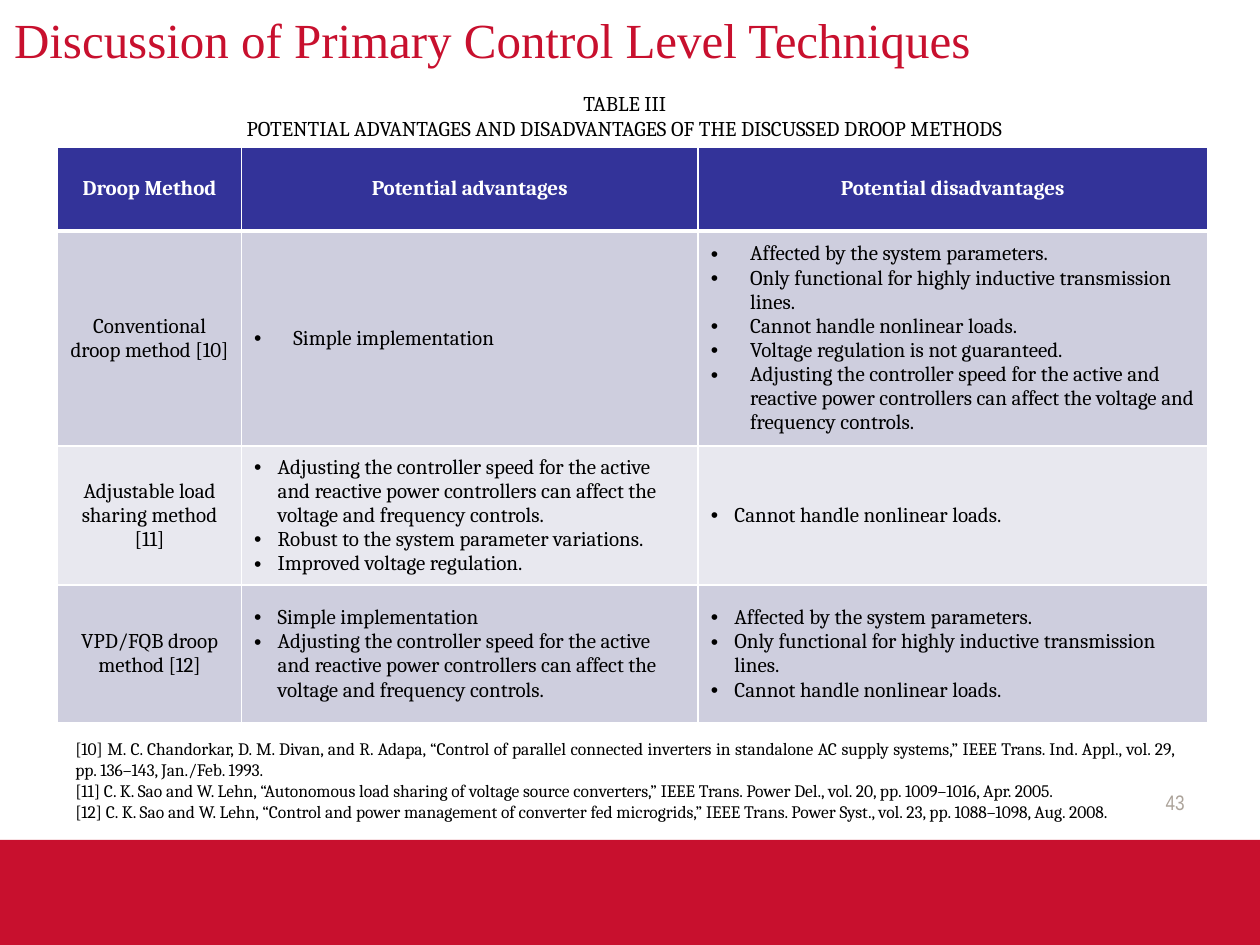
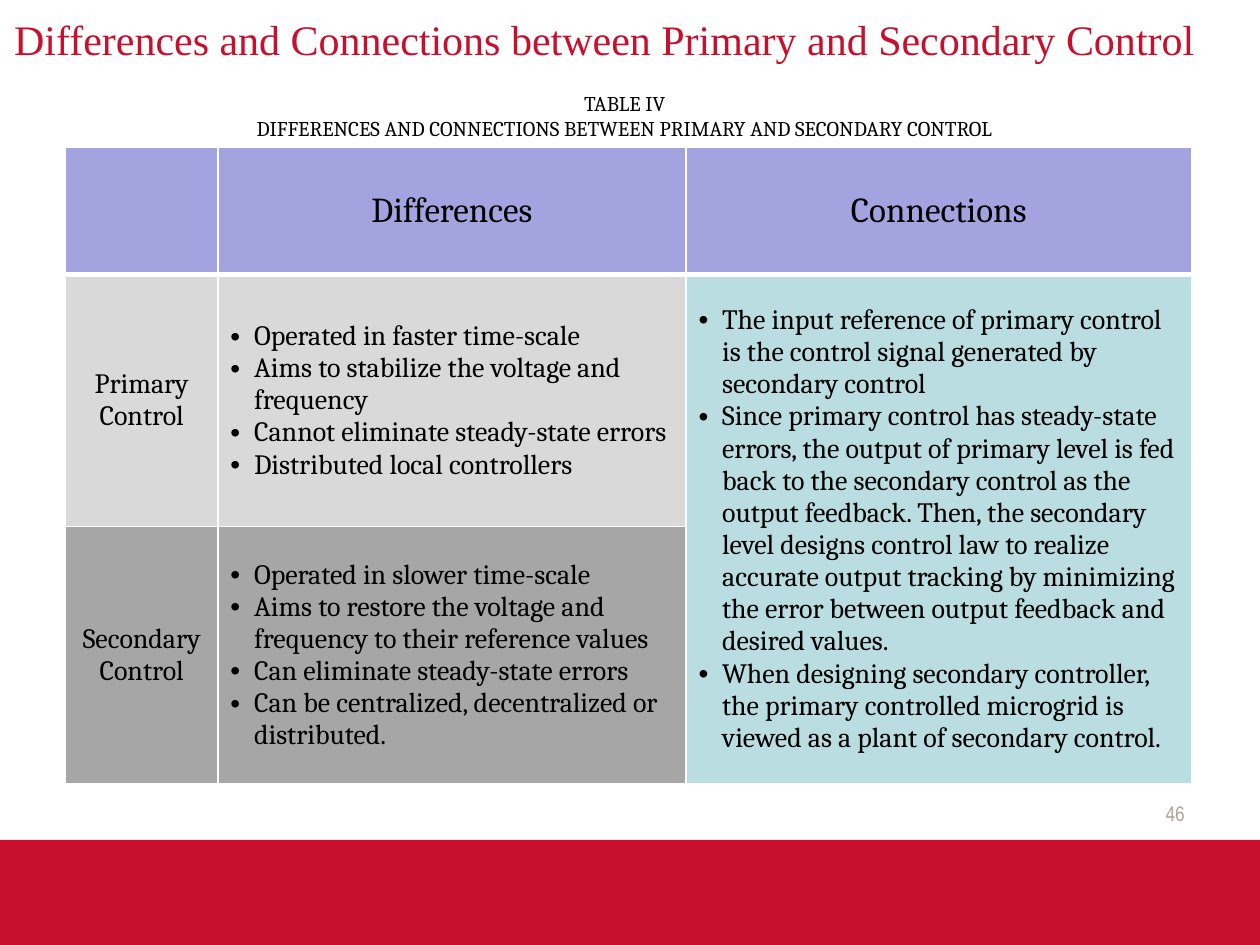
import lxml.etree
import pptx
import pptx.dml.color
import pptx.enum.shapes
import pptx.enum.text
import pptx.oxml.ns
import pptx.util

Pt = pptx.util.Pt
RGBColor = pptx.dml.color.RGBColor
ALIGN = pptx.enum.text.PP_ALIGN
ANCHOR = pptx.enum.text.MSO_ANCHOR
qn = pptx.oxml.ns.qn

# Shared colours and fonts
RED = RGBColor(0xC8, 0x10, 0x2E)
WHITE = RGBColor(0xFF, 0xFF, 0xFF)
BLACK = RGBColor(0, 0, 0)
NUMBER_GREY = RGBColor(0xAC, 0xA3, 0x9A)
NAVY = RGBColor(0x33, 0x33, 0x99)
LAVENDER = RGBColor(0xCE, 0xCE, 0xDE)
PALE = RGBColor(0xE8, 0xE8, 0xEF)
VIOLET = RGBColor(0xA3, 0xA3, 0xE0)
LIGHT_GREY = RGBColor(0xD9, 0xD9, 0xD9)
MID_GREY = RGBColor(0xA6, 0xA6, 0xA6)
TEAL = RGBColor(0xBA, 0xDD, 0xE1)
TITLE_FONT, BODY_FONT, NUMBER_FONT = "Times New Roman", "Cambria", "Arial Narrow"

# Statements that return in several cells
SIMPLE = "Simple implementation"
SPEED = ("Adjusting the controller speed for the active and reactive power "
         "controllers can affect the voltage and frequency controls.")
AFFECTED = "Affected by the system parameters."
INDUCTIVE = "Only functional for highly inductive transmission lines."
NONLINEAR = "Cannot handle nonlinear loads."

# Content: a list in a table cell becomes bullets, None continues the cell above
PAGES = [
    dict(
        title="Discussion of Primary Control Level Techniques",
        title_size=28, title_width=612, number="43", number_top=444,
        caption=["TABLE III", "POTENTIAL ADVANTAGES AND DISADVANTAGES OF THE DISCUSSED DROOP METHODS"],
        left=33, columns=[105, 261, 291], heights=[48, 123, 79, 79],
        head=dict(size=12, color=WHITE, bold=True), body_size=12,
        fills=[[NAVY] * 3, [LAVENDER] * 3, [PALE] * 3, [LAVENDER] * 3],
        indents=[0, 22.5, 13.5, 13.5],
        rows=[
            ["Droop Method", "Potential advantages", "Potential disadvantages"],
            ["Conventional droop method [10]", [SIMPLE],
             [AFFECTED, INDUCTIVE, NONLINEAR, "Voltage regulation is not guaranteed.", SPEED]],
            ["Adjustable load sharing method [11]",
             [SPEED, "Robust to the system parameter variations.", "Improved voltage regulation."],
             [NONLINEAR]],
            ["VPD/FQB droop method [12]", [SIMPLE, SPEED], [AFFECTED, INDUCTIVE, NONLINEAR]],
        ],
        references=[
            "[10] M. C. Chandorkar, D. M. Divan, and R. Adapa, “Control of parallel connected inverters "
            "in standalone AC supply systems,” IEEE Trans. Ind. Appl., vol. 29, pp. 136–143, Jan./Feb. 1993.",
            "[11] C. K. Sao and W. Lehn, “Autonomous load sharing of voltage source converters,” "
            "IEEE Trans. Power Del., vol. 20, pp. 1009–1016, Apr. 2005.",
            "[12] C. K. Sao and W. Lehn, “Control and power management of converter fed microgrids,” "
            "IEEE Trans. Power Syst., vol. 23, pp. 1088–1098, Aug. 2008.",
        ],
    ),
    dict(
        title="Differences and Connections between Primary and Secondary Control",
        title_size=24, title_width=719, number="46", number_top=450,
        caption=["TABLE IV", "DIFFERENCES AND CONNECTIONS BETWEEN PRIMARY AND SECONDARY CONTROL"],
        left=37.5, columns=[87, 267.5, 289], heights=[73, 144, 147],
        head=dict(size=20), body_size=16,
        fills=[[VIOLET] * 3, [LIGHT_GREY, LIGHT_GREY, TEAL], [MID_GREY, MID_GREY, TEAL]],
        indents=[0, 13.5, 13.5],
        rows=[
            ["", "Differences", "Connections"],
            ["Primary Control",
             ["Operated in faster time-scale",
              "Aims to stabilize the voltage and frequency",
              "Cannot eliminate steady-state errors",
              "Distributed local controllers"],
             ["The input reference of primary control is the control signal generated by secondary control",
              "Since primary control has steady-state errors, the output of primary level is fed back to "
              "the secondary control as the output feedback. Then, the secondary level designs control law "
              "to realize accurate output tracking by minimizing the error between output feedback and "
              "desired values.",
              "When designing secondary controller, the primary controlled microgrid is viewed as a plant "
              "of secondary control."]],
            ["Secondary Control",
             ["Operated in slower time-scale",
              "Aims to restore the voltage and frequency to their reference values",
              "Can eliminate steady-state errors",
              "Can be centralized, decentralized or distributed."],
             None],
        ],
        references=[],
    ),
]


def write(frame, text, size=12, font=BODY_FONT, color=BLACK, bold=False,
          align=ALIGN.LEFT, anchor=ANCHOR.TOP, indent=0):
    """Fill a text frame with one line or a list of lines; an indent adds bullets."""
    frame.word_wrap = True
    frame.vertical_anchor = anchor
    lines = [text] if isinstance(text, str) else text
    for index, line in enumerate(lines):
        para = frame.add_paragraph() if index else frame.paragraphs[0]
        para.alignment = align
        if indent:
            properties = para._p.get_or_add_pPr()
            properties.set("marL", str(Pt(indent)))
            properties.set("indent", str(-Pt(indent)))
            lxml.etree.SubElement(properties, qn("a:buFont"), typeface="Arial")
            lxml.etree.SubElement(properties, qn("a:buChar"), char="•")
        para.font.size = Pt(size)
        span = para.add_run()
        span.text = line
        span.font.size, span.font.name, span.font.bold = Pt(size), font, bold
        span.font.color.rgb = color


def set_border(cell, side, width):
    """Draw one white edge of a table cell."""
    line = lxml.etree.SubElement(cell._tc.get_or_add_tcPr(), qn("a:ln" + side), w=str(Pt(width)))
    fill = lxml.etree.SubElement(line, qn("a:solidFill"))
    lxml.etree.SubElement(fill, qn("a:srgbClr"), val=str(WHITE))


deck = pptx.Presentation()
deck.slide_width, deck.slide_height = Pt(720), Pt(540)

for content in PAGES:
    page = deck.slides.add_slide(deck.slide_layouts[6])

    # Bottom band
    band = page.shapes.add_shape(pptx.enum.shapes.MSO_SHAPE.RECTANGLE, Pt(0), Pt(480), Pt(720), Pt(60))
    band.shadow.inherit = False
    band.fill.solid()
    band.fill.fore_color.rgb = RED
    band.line.fill.background()

    # Title, page number and table caption
    box = page.shapes.add_textbox(Pt(1), Pt(1), Pt(content["title_width"]), Pt(42))
    write(box.text_frame, content["title"], size=content["title_size"], font=TITLE_FONT,
          color=RED, anchor=ANCHOR.MIDDLE)
    box = page.shapes.add_textbox(Pt(516), Pt(content["number_top"]), Pt(168), Pt(29))
    write(box.text_frame, content["number"], font=NUMBER_FONT, color=NUMBER_GREY,
          align=ALIGN.RIGHT, anchor=ANCHOR.MIDDLE)
    box = page.shapes.add_textbox(Pt(90), Pt(48), Pt(534), Pt(36))
    write(box.text_frame, content["caption"], align=ALIGN.CENTER)

    # Table
    rows, columns, heights = content["rows"], content["columns"], content["heights"]
    table = page.shapes.add_table(len(rows), len(columns), Pt(content["left"]), Pt(84),
                                  Pt(sum(columns)), Pt(sum(heights))).table
    table.horz_banding = False
    for column, width in zip(table.columns, columns):
        column.width = Pt(width)
    for r, row in enumerate(rows):
        table.rows[r].height = Pt(heights[r])
        for c, text in enumerate(row):
            cell = table.cell(r, c)
            for side in "LRTB":
                under_head = (r, side) in ((0, "B"), (1, "T"))
                set_border(cell, side, 3 if under_head else 1)
            cell.fill.solid()
            cell.fill.fore_color.rgb = content["fills"][r][c]
            cell.vertical_anchor = ANCHOR.MIDDLE
            if text is None:
                table.cell(r - 1, c).merge(cell)
            elif isinstance(text, list):
                write(cell.text_frame, text, size=content["body_size"],
                      anchor=None, indent=content["indents"][r])
            else:
                look = content["head"] if r == 0 else dict(size=content["body_size"])
                write(cell.text_frame, text, align=ALIGN.CENTER, anchor=None, **look)

    # References
    if content["references"]:
        box = page.shapes.add_textbox(Pt(36), Pt(418), Pt(642), Pt(55.5))
        write(box.text_frame, content["references"], size=10, align=ALIGN.JUSTIFY)

deck.save("out.pptx")
